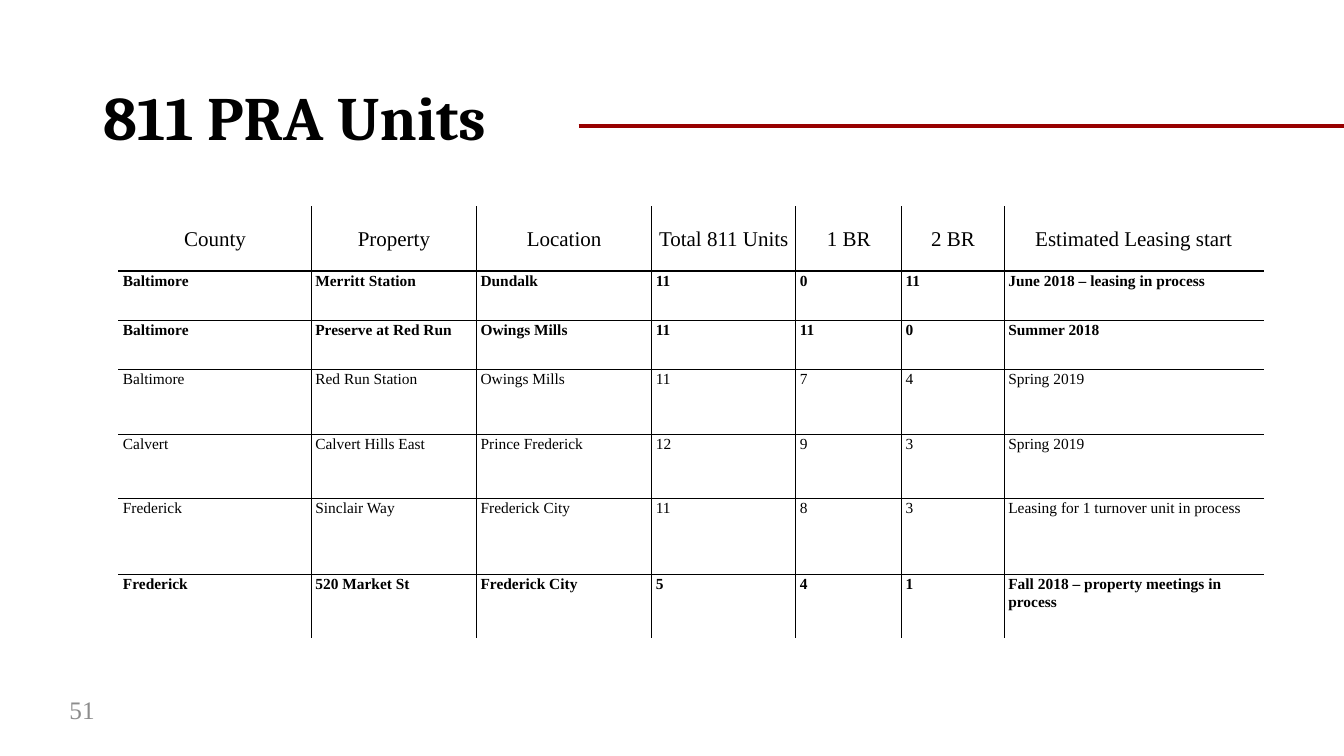
from dataclasses import dataclass
from typing import Any

from lxml.etree import SubElement
from pptx import Presentation
from pptx.dml.color import RGBColor
from pptx.enum.shapes import MSO_CONNECTOR as Connector
from pptx.enum.text import MSO_ANCHOR as Anchor, MSO_AUTO_SIZE as AutoSize, PP_ALIGN as Align
from pptx.oxml import parse_xml
from pptx.oxml.ns import nsdecls, qn
from pptx.util import Inches, Pt

BLACK = RGBColor(0x00, 0x00, 0x00)
WHITE = RGBColor(0xFF, 0xFF, 0xFF)
GRAY = RGBColor(0x8C, 0x8C, 0x8C)
RED = RGBColor(0x98, 0x00, 0x00)

SLIDE_WIDTH = Inches(13.33)
SLIDE_HEIGHT = Inches(7.5)


@dataclass(frozen=True)
class Area:
    """Place and size in percent of the slide."""
    left: float
    top: float
    width: float
    height: float

    def lengths(self) -> tuple[int, int, int, int]:
        return (int(SLIDE_WIDTH * self.left / 100), int(SLIDE_HEIGHT * self.top / 100),
                int(SLIDE_WIDTH * self.width / 100), int(SLIDE_HEIGHT * self.height / 100))


@dataclass(frozen=True)
class Row:
    height: float
    texts: tuple[str, ...]
    bold: bool = False


TITLE_AREA = Area(6.9, 8.67, 86.27, 14.53)
NUMBER_AREA = Area(4.43, 91.2, 4.43, 5.33)
RULE_AREA = Area(43.06, 16.67, 56.94, 0)
TABLE_AREA = Area(8.85, 27.33, 85.15, 57.2)

# Relative column widths and row heights of the table
COLUMNS = (1.91, 1.64, 1.74, 1.43, 1.05, 1.02, 2.57)
ROWS = (
    Row(0.64, ("County", "Property", "Location", "Total 811 Units", "1 BR", "2 BR",
               "Estimated Leasing start")),
    Row(0.49, ("Baltimore", "Merritt Station", "Dundalk", "11", "0", "11",
               "June 2018 – leasing in process"), True),
    Row(0.49, ("Baltimore", "Preserve at Red Run", "Owings Mills", "11", "11", "0",
               "Summer 2018"), True),
    Row(0.64, ("Baltimore", "Red Run Station", "Owings Mills", "11", "7", "4", "Spring 2019")),
    Row(0.64, ("Calvert", "Calvert Hills East", "Prince Frederick", "12", "9", "3",
               "Spring 2019")),
    Row(0.75, ("Frederick", "Sinclair Way", "Frederick City", "11", "8", "3",
               "Leasing for 1 turnover unit in process")),
    Row(0.64, ("Frederick", "520 Market St", "Frederick City", "5", "4", "1",
               "Fall 2018 – property meetings in process"), True),
)

TITLE_FONT = {"name": "Cambria", "size": Pt(44), "bold": True}
NUMBER_FONT = {"name": "Times New Roman", "size": Pt(18)}
HEADER_FONT = {"name": "Times New Roman", "size": Pt(15)}
BODY_FONT = {"name": "Times New Roman", "size": Pt(11)}
CELL_FORMAT = {"margin_left": Inches(0.04), "margin_right": Inches(0.04),
               "margin_top": 0, "margin_bottom": 0}
CELL_SPACING = {"line_spacing": 1.07, "space_after": Pt(8)}


def apply(target: Any, values: dict[str, Any]) -> None:
    for name, value in values.items():
        setattr(target, name, value)


def write(para: Any, text: str, font: dict[str, Any], color: RGBColor) -> None:
    span = para.add_run()
    span.text = text
    apply(span.font, font)
    span.font.color.rgb = color


def place(shape: Any, area: Area) -> None:
    apply(shape, dict(zip(("left", "top", "width", "height"), area.lengths())))


def set_borders(cell: Any, colors: dict[str, RGBColor]) -> None:
    properties = cell._tc.get_or_add_tcPr()
    for position, (side, color) in enumerate(colors.items()):
        properties.insert(position, parse_xml(
            f'<a:ln{side} {nsdecls("a")} w="12700"><a:solidFill>'
            f'<a:srgbClr val="{color}"/></a:solidFill></a:ln{side}>'))


def add_title(page: Any) -> None:
    title = page.shapes.title
    place(title, TITLE_AREA)
    frame = title.text_frame
    apply(frame, {"vertical_anchor": Anchor.MIDDLE, "auto_size": AutoSize.NONE})
    para = frame.paragraphs[0]
    apply(para, {"alignment": Align.LEFT, "line_spacing": 0.9})
    write(para, "811 PRA Units", TITLE_FONT, BLACK)


def add_page_number(page: Any) -> None:
    box = page.shapes.add_textbox(*NUMBER_AREA.lengths())
    apply(box.text_frame, {"word_wrap": True, "vertical_anchor": Anchor.MIDDLE})
    write(box.text_frame.paragraphs[0], "51", NUMBER_FONT, GRAY)


def add_rule(page: Any) -> None:
    left, top, width, _ = RULE_AREA.lengths()
    rule = page.shapes.add_connector(Connector.STRAIGHT, left, top, left + width, top)
    rule.line.color.rgb = RED
    rule.line.width = Pt(2.25)
    SubElement(rule._element.spPr, qn("a:effectLst"))


def add_units_table(page: Any) -> None:
    left, top, width, height = TABLE_AREA.lengths()
    table = page.shapes.add_table(len(ROWS), len(COLUMNS), left, top, width, height).table
    apply(table, {"first_row": False, "horz_banding": False})
    for column, share in zip(table.columns, COLUMNS):
        column.width = int(width * share / sum(COLUMNS))
    total_height = sum(row.height for row in ROWS)
    last_row, last_column = len(ROWS) - 1, len(COLUMNS) - 1

    for r, row in enumerate(ROWS):
        table.rows[r].height = int(height * row.height / total_height)
        header = r == 0
        for c, text in enumerate(row.texts):
            cell = table.cell(r, c)
            apply(cell, CELL_FORMAT)
            cell.vertical_anchor = Anchor.MIDDLE if header else Anchor.TOP
            cell.fill.background()
            # Outer edges blend into the page; inner ones are black
            set_borders(cell, {"L": BLACK if c else WHITE,
                               "R": BLACK if c < last_column else WHITE,
                               "T": BLACK if r else WHITE,
                               "B": BLACK if r < last_row else WHITE})
            para = cell.text_frame.paragraphs[0]
            apply(para, CELL_SPACING)
            para.alignment = Align.CENTER if header else Align.LEFT
            font = HEADER_FONT if header else BODY_FONT
            write(para, text, {**font, "bold": row.bold}, BLACK)


def main() -> None:
    deck = Presentation()
    apply(deck, {"slide_width": SLIDE_WIDTH, "slide_height": SLIDE_HEIGHT})
    page = deck.slides.add_slide(deck.slide_layouts.get_by_name("Title Only"))
    add_title(page)
    add_page_number(page)
    add_rule(page)
    add_units_table(page)
    deck.save("out.pptx")


if __name__ == "__main__":
    main()
